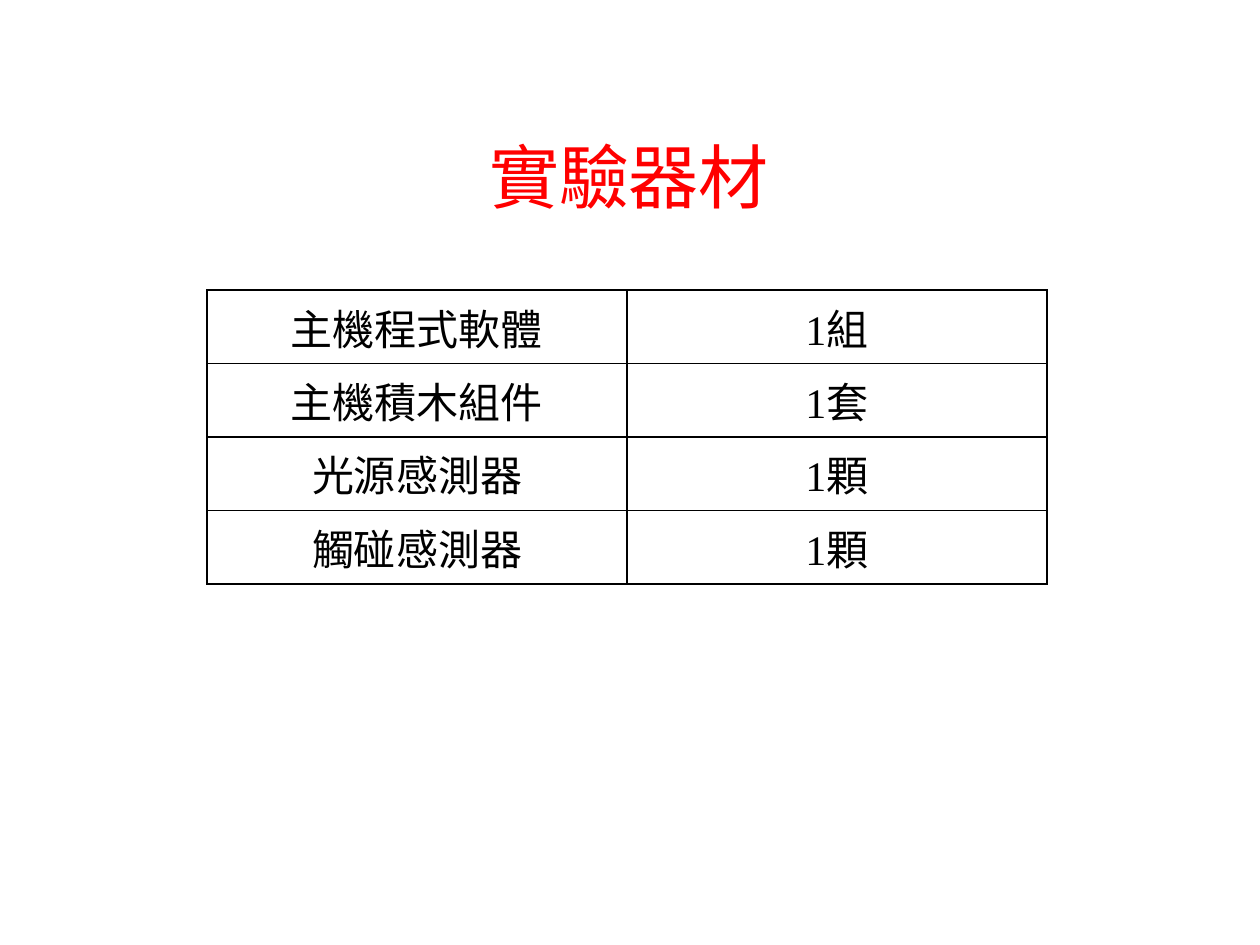
from lxml import etree
from pptx import Presentation
from pptx.dml.color import RGBColor
from pptx.enum.text import MSO_ANCHOR, PP_ALIGN
from pptx.oxml.ns import qn
from pptx.util import Pt

PX = 914400 / 126
CENTER = PP_ALIGN.CENTER
MIDDLE = MSO_ANCHOR.MIDDLE
CJK_FONT = "Noto Sans CJK SC"
LATIN_FONT = "Times New Roman"
BLACK = "000000"
RED = "FF0000"
EQUIPMENT = [
    ("主機程式軟體", "1組"),
    ("主機積木組件", "1套"),
    ("光源感測器", "1顆"),
    ("觸碰感測器", "1顆"),
]


def emu(pixels):
    return round(pixels * PX)


def color(hex_value):
    return RGBColor.from_string(hex_value)


def write(text_frame, text, size, font_name, hex_value):
    paragraph = text_frame.paragraphs[0]
    paragraph.text = text
    paragraph.alignment = CENTER
    font = paragraph.font
    font.size = Pt(size)
    font.color.rgb = color(hex_value)
    font.name = font_name
    properties = paragraph._p.pPr.find(qn("a:defRPr"))
    etree.SubElement(properties, qn("a:ea"), typeface=CJK_FONT)


def add_borders(cell):
    properties = cell._tc.get_or_add_tcPr()
    for index, side in enumerate(("lnL", "lnR", "lnT", "lnB")):
        line = etree.Element(qn(f"a:{side}"), w=str(Pt(1)))
        fill = etree.SubElement(line, qn("a:solidFill"))
        etree.SubElement(fill, qn("a:srgbClr"), val=BLACK)
        properties.insert(index, line)


def add_title(slide, left, top, width, height):
    shape = slide.shapes.add_textbox(emu(left), emu(top), emu(width), emu(height))
    text_frame = shape.text_frame
    text_frame.word_wrap = True
    text_frame.vertical_anchor = MIDDLE
    write(text_frame, "實驗器材", 40, CJK_FONT, RED)


def add_equipment_table(slide, left, top, width, height):
    row_count, column_count = len(EQUIPMENT), len(EQUIPMENT[0])
    table = slide.shapes.add_table(
        row_count, column_count, emu(left), emu(top), emu(width), emu(height)
    ).table
    table.first_row = False
    table.horz_banding = False
    for row_index, values in enumerate(EQUIPMENT):
        for column_index, value in enumerate(values):
            cell = table.cell(row_index, column_index)
            cell.fill.background()
            cell.vertical_anchor = MIDDLE
            add_borders(cell)
            write(cell.text_frame, value, 24, LATIN_FONT, BLACK)


def main():
    presentation = Presentation()
    presentation.slide_width = emu(1260)
    presentation.slide_height = emu(945)
    slide = presentation.slides.add_slide(presentation.slide_layouts[6])
    add_title(slide, 62, 97, 1134, 158)
    add_equipment_table(slide, 207, 290, 840, 294)
    presentation.save("out.pptx")


if __name__ == "__main__":
    main()
